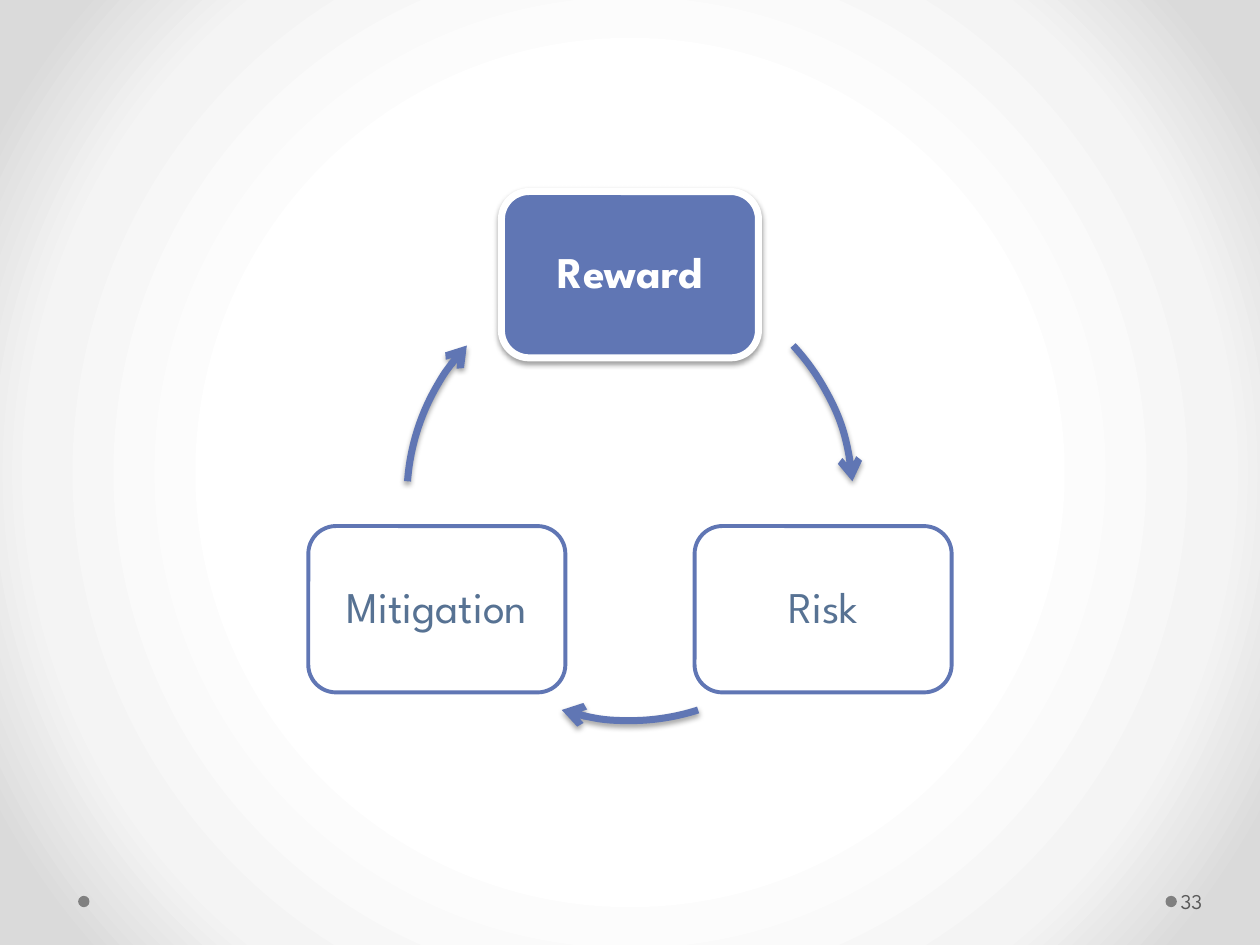
from dataclasses import dataclass
from math import cos, radians, sin

from lxml import etree
from pptx import Presentation
from pptx.dml.color import RGBColor
from pptx.enum.shapes import MSO_SHAPE
from pptx.enum.text import MSO_ANCHOR, PP_ALIGN
from pptx.oxml.ns import qn
from pptx.util import Inches, Pt

ROUNDED = MSO_SHAPE.ROUNDED_RECTANGLE
OVAL = MSO_SHAPE.OVAL
ARC = MSO_SHAPE.ARC
MIDDLE = MSO_ANCHOR.MIDDLE
LEFT, CENTER = PP_ALIGN.LEFT, PP_ALIGN.CENTER


@dataclass(frozen=True)
class Theme:
    """Colours, font and type sizes of the slide."""
    font: str = "League Spartan"
    accent: str = "6076B4"
    white: str = "FFFFFF"
    node_text: str = "577293"
    number_text: str = "595959"
    dot: str = "808080"
    shadow: str = "000000"
    background: tuple = ((50, "FFFFFF"), (76, "F4F4F4"), (92, "DADADA"))
    node_size: int = 25
    number_size: int = 12


THEME = Theme()
CENTER_X, CENTER_Y, RADIUS = 5, 3.95, 1.77
NODE_WIDTH, NODE_HEIGHT = 2.04, 1.32
NODES = (
    ("Reward", -90, dict(fill=THEME.accent, line=THEME.white, width=4,
                         color=THEME.white, bold=True, shadow=(38, 1.6))),
    ("Risk", 30, dict(fill=THEME.white, line=THEME.accent, width=2.25,
                      color=THEME.node_text, bold=False, shadow=None)),
    ("Mitigation", 150, dict(fill=THEME.white, line=THEME.accent, width=2.25,
                             color=THEME.node_text, bold=False, shadow=None)),
)
ARROWS = ((317, 355.8), (72.2, 107.8), (184.2, 223))


def add_child(parent, tag, **attributes):
    """Append a DrawingML element with the given attributes."""
    child = etree.SubElement(parent, qn(tag))
    for name, value in attributes.items():
        child.set(name, str(value))
    return child


def paint_background(slide):
    """Fill the slide with a circular gradient from its centre."""
    fill = slide.background.fill
    fill.gradient()
    gradient = slide.background._cSld.find(".//" + qn("a:gradFill"))
    for child in list(gradient):
        gradient.remove(child)
    stops = add_child(gradient, "a:gsLst")
    for position, color in THEME.background:
        stop = add_child(stops, "a:gs", pos=position * 1000)
        add_child(stop, "a:srgbClr", val=color)
    circle = add_child(gradient, "a:path", path="circle")
    add_child(circle, "a:fillToRect", l=50000, t=50000, r=50000, b=50000)


def add_shadow(shape, alpha, distance):
    """Give a shape a soft shadow that falls straight down."""
    effects = shape._element.spPr.find(qn("a:effectLst"))
    shadow = add_child(effects, "a:outerShdw", blurRad=Pt(3.1), dist=Pt(distance),
                       dir=90 * 60000, rotWithShape=0)
    color = add_child(shadow, "a:srgbClr", val=THEME.shadow)
    add_child(color, "a:alpha", val=alpha * 1000)


def add_outline(shape, color, width):
    """Set the line of a shape."""
    shape.line.color.rgb = RGBColor.from_string(color)
    shape.line.width = Pt(width)


def add_preset(slide, kind, left, top, width, height, fill=None):
    """Add a preset shape without theme shadow."""
    shape = slide.shapes.add_shape(
        kind, Inches(left), Inches(top), Inches(width), Inches(height))
    shape.shadow.inherit = False
    if fill:
        shape.fill.solid()
        shape.fill.fore_color.rgb = RGBColor.from_string(fill)
    else:
        shape.fill.background()
    return shape


def write_text(box, text, size, color, align, frame_format, bold=False, spacing=1.0):
    """Write one formatted paragraph into a box."""
    frame = box.text_frame
    for name, value in frame_format.items():
        setattr(frame, name, value)
    para = frame.paragraphs[0]
    para.alignment, para.line_spacing = align, spacing
    span = para.add_run()
    span.text = text
    for name, value in dict(name=THEME.font, size=Pt(size), bold=bold).items():
        setattr(span.font, name, value)
    span.font.color.rgb = RGBColor.from_string(color)


def add_node(slide, text, angle, style):
    """Add a rounded box centred on the cycle at an angle."""
    left = CENTER_X + RADIUS * cos(radians(angle)) - NODE_WIDTH / 2
    top = CENTER_Y + RADIUS * sin(radians(angle)) - NODE_HEIGHT / 2
    node = add_preset(slide, ROUNDED, left, top, NODE_WIDTH, NODE_HEIGHT, style["fill"])
    add_outline(node, style["line"], style["width"])
    if style["shadow"]:
        add_shadow(node, *style["shadow"])
    margin = Inches(0.16)
    frame_format = dict(word_wrap=True, vertical_anchor=MIDDLE, margin_left=margin,
                        margin_right=margin, margin_top=margin, margin_bottom=margin)
    write_text(node, text, THEME.node_size, style["color"], CENTER,
               frame_format, style["bold"], 0.9)


def add_arrow(slide, start, end):
    """Add a clockwise arc of the cycle with an arrowhead at its end."""
    arc = add_preset(slide, ARC, CENTER_X - RADIUS, CENTER_Y - RADIUS,
                     2 * RADIUS, 2 * RADIUS)
    for index, angle in enumerate((start, end)):
        arc.adjustments[index] = angle * 60000 / 100000
    add_outline(arc, THEME.accent, 4)
    add_child(arc.line._get_or_add_ln(), "a:tailEnd", type="arrow")
    add_shadow(arc, 35, 1.8)


def add_footer(slide):
    """Add the two footer dots and the slide number."""
    for left in (9.25, 0.62):
        dot = add_preset(slide, OVAL, left, 7.11, 0.09, 0.09, THEME.dot)
        dot.line.fill.background()
    box = slide.shapes.add_textbox(Inches(9.34), Inches(6.95), Inches(0.61), Inches(0.4))
    frame_format = dict(word_wrap=True, vertical_anchor=MIDDLE, margin_left=Inches(0.03),
                        margin_right=Inches(0.05))
    write_text(box, "33", THEME.number_size, THEME.number_text, LEFT, frame_format)


def main():
    """Build the cycle slide and save it."""
    deck = Presentation()
    deck.slide_width, deck.slide_height = Inches(10), Inches(7.5)
    slide = deck.slides.add_slide(deck.slide_layouts[6])
    paint_background(slide)
    add_footer(slide)
    for node, arrow in zip(NODES, ARROWS):
        add_node(slide, *node)
        add_arrow(slide, *arrow)
    deck.save("out.pptx")


if __name__ == "__main__":
    main()
